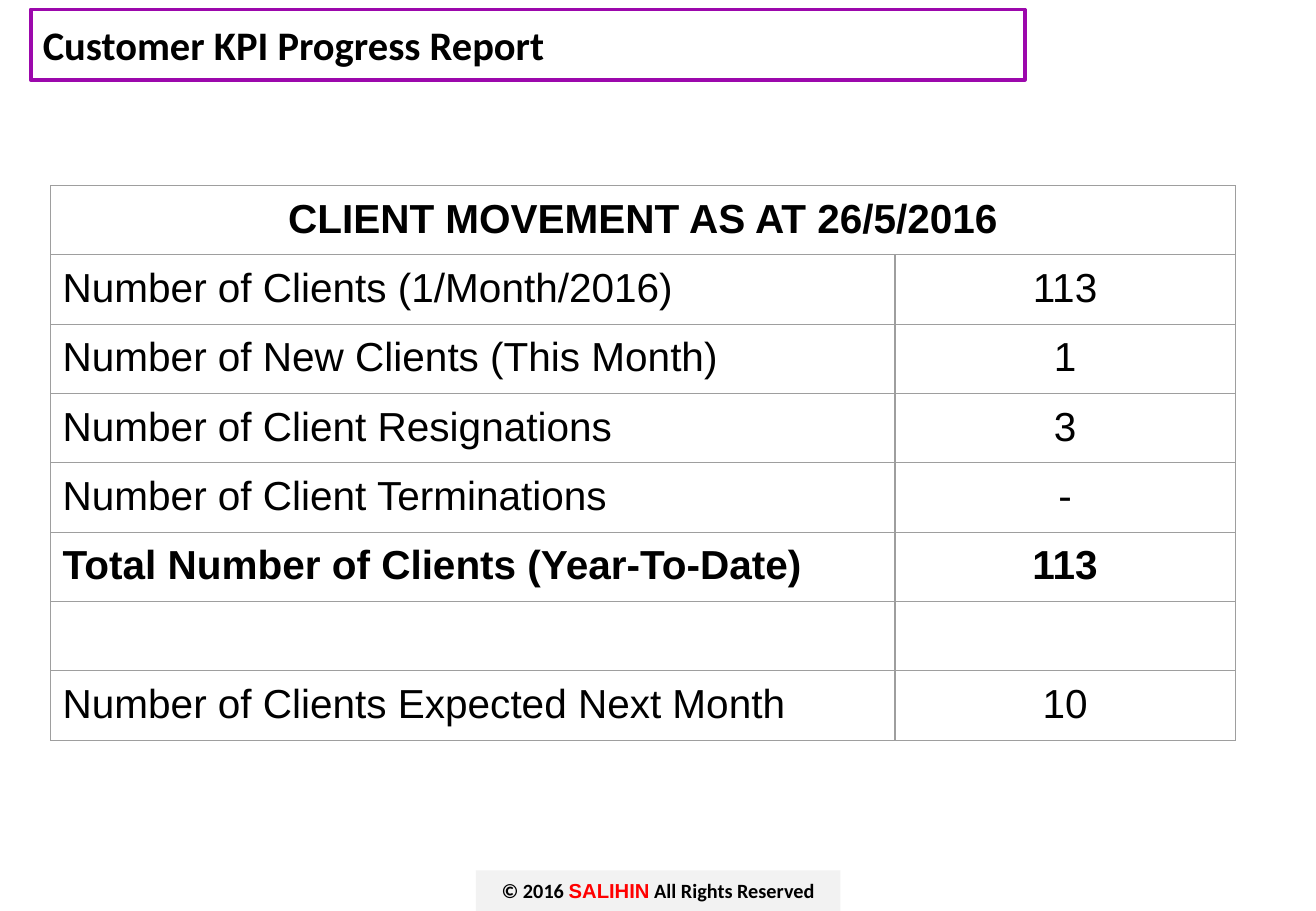
from lxml.etree import SubElement
from pptx import Presentation
from pptx.dml.color import RGBColor
from pptx.enum.shapes import MSO_SHAPE
from pptx.enum.text import MSO_ANCHOR, MSO_AUTO_SIZE, PP_ALIGN
from pptx.oxml.ns import qn
from pptx.util import Cm, Pt

COLORS = {
    "black": "000000",
    "red": "FF0000",
    "purple": "9C08AC",
    "border": "9E9E9E",
    "footer": "F2F2F2",
}
HEADING = "CLIENT MOVEMENT AS AT 26/5/2016"
TOTAL = "Total Number of Clients (Year-To-Date)"
CLIENT_ROWS = [
    (HEADING, ""),
    ("Number of Clients (1/Month/2016)", "113"),
    ("Number of New Clients (This Month)", "1"),
    ("Number of Client Resignations", "3"),
    ("Number of Client Terminations", "-"),
    (TOTAL, "113"),
    ("", ""),
    ("Number of Clients Expected Next Month", "10"),
]
COLUMN_WIDTHS = (Cm(17.65), Cm(7.11))
ROW_HEIGHT = Cm(1.45)


def color(name):
    """Return the named colour."""
    return RGBColor.from_string(COLORS[name])


def add_run(paragraph, text, size, font_name, bold=True, color_name="black"):
    """Append a formatted run to a paragraph."""
    run = paragraph.add_run()
    run.text = text
    run.font.size = Pt(size)
    run.font.name = font_name
    run.font.bold = bold
    run.font.color.rgb = color(color_name)


def set_borders(cell):
    """Draw a thin grey line on all four sides of a cell."""
    properties = cell._tc.get_or_add_tcPr()
    for index, side in enumerate(("a:lnL", "a:lnR", "a:lnT", "a:lnB")):
        line = SubElement(properties, qn(side), w=str(Pt(0.75)))
        fill = SubElement(line, qn("a:solidFill"))
        SubElement(fill, qn("a:srgbClr"), val=COLORS["border"])
        properties.insert(index, line)


def add_title(slide, text):
    """Place the title in its purple frame."""
    title = slide.shapes.title
    title.left, title.top, title.width, title.height = Cm(0.64), Cm(0.2), Cm(20.78), Cm(1.47)
    title.line.color.rgb = color("purple")
    title.line.width = Pt(2.25)
    frame = title.text_frame
    frame.auto_size = MSO_AUTO_SIZE.NONE
    frame.vertical_anchor = MSO_ANCHOR.MIDDLE
    paragraph = frame.paragraphs[0]
    paragraph.alignment = PP_ALIGN.LEFT
    add_run(paragraph, text, 24, "Calibri")


def fill_cell(cell, text, centred, bold):
    """Format a table cell and write its text."""
    cell.fill.background()
    set_borders(cell)
    cell.margin_left = cell.margin_right = Cm(0.25)
    cell.margin_top = cell.margin_bottom = Cm(0.23)
    if text:
        paragraph = cell.text_frame.paragraphs[0]
        paragraph.alignment = PP_ALIGN.CENTER if centred else PP_ALIGN.LEFT
        add_run(paragraph, text, 24, "Arial", bold)


def add_client_table(slide):
    """Add the client movement table with its merged heading row."""
    table = slide.shapes.add_table(
        len(CLIENT_ROWS), len(COLUMN_WIDTHS), Cm(1.06), Cm(3.88),
        sum(COLUMN_WIDTHS), ROW_HEIGHT * len(CLIENT_ROWS)).table
    table.first_row = table.horz_banding = False
    for column, width in zip(table.columns, COLUMN_WIDTHS):
        column.width = width
    table.cell(0, 0).merge(table.cell(0, 1))
    for row_index, texts in enumerate(CLIENT_ROWS):
        table.rows[row_index].height = ROW_HEIGHT
        bold = texts[0] in (HEADING, TOTAL)
        for column_index, text in enumerate(texts):
            centred = column_index == 1 or text == HEADING
            fill_cell(table.cell(row_index, column_index), text, centred, bold)


def add_footer(slide):
    """Add the grey copyright box."""
    shape = slide.shapes.add_shape(MSO_SHAPE.RECTANGLE, Cm(9.95), Cm(18.2), Cm(7.62), Cm(0.85))
    shape.shadow.inherit = False
    shape.fill.solid()
    shape.fill.fore_color.rgb = color("footer")
    shape.line.fill.background()
    shape.text_frame.word_wrap = True
    shape.text_frame.vertical_anchor = MSO_ANCHOR.MIDDLE
    paragraph = shape.text_frame.paragraphs[0]
    paragraph.alignment = PP_ALIGN.CENTER
    add_run(paragraph, "© 2016 ", 12, "Calibri")
    add_run(paragraph, "SALIHIN", 12, "Arial", color_name="red")
    add_run(paragraph, " All Rights Reserved", 12, "Calibri")


def main():
    """Build and save the client report slide."""
    presentation = Presentation()
    presentation.slide_width, presentation.slide_height = Cm(27.51), Cm(19.05)
    slide = presentation.slides.add_slide(presentation.slide_layouts.get_by_name("Title Only"))
    add_footer(slide)
    add_title(slide, "Customer KPI Progress Report")
    add_client_table(slide)
    presentation.save("out.pptx")


if __name__ == "__main__":
    main()
